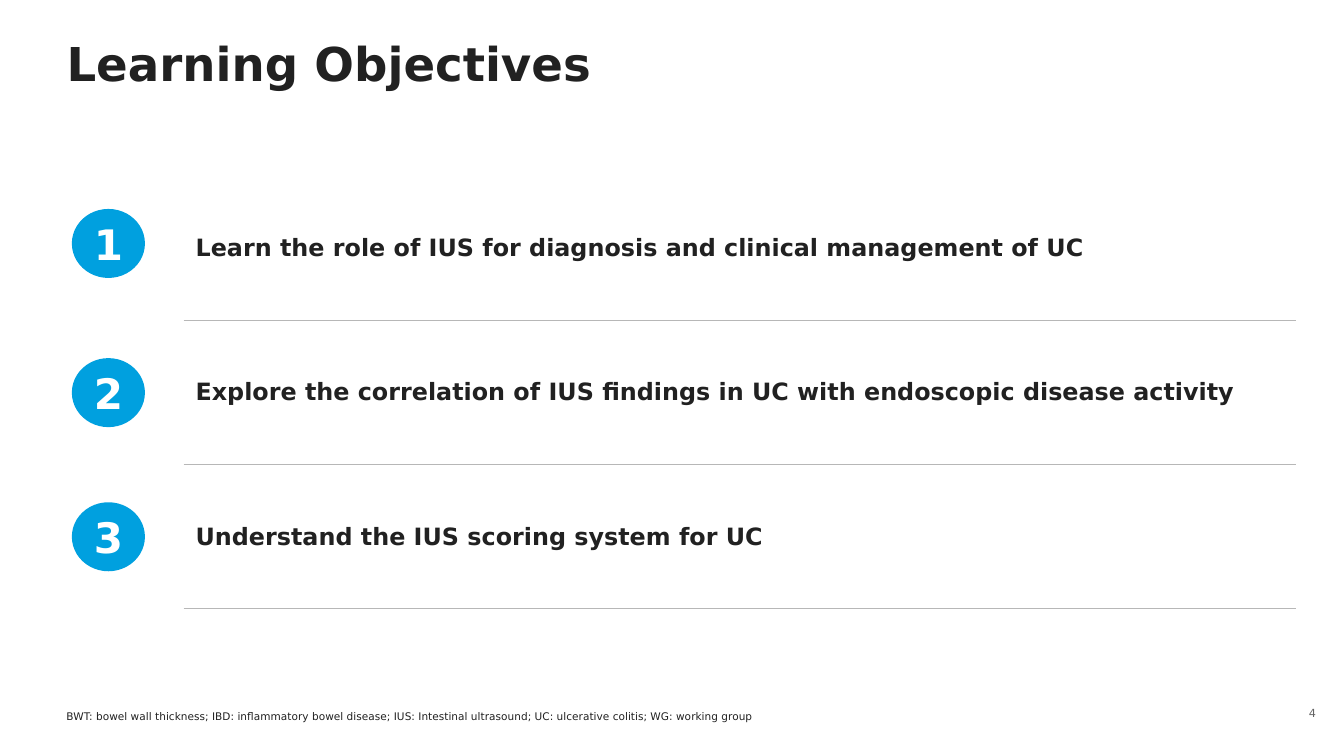
from lxml.etree import SubElement
from pptx import Presentation
from pptx.dml.color import RGBColor
from pptx.enum.shapes import MSO_SHAPE
from pptx.enum.text import MSO_ANCHOR, PP_ALIGN
from pptx.oxml.ns import qn
from pptx.util import Inches, Pt

INK = RGBColor(0x21, 0x21, 0x21)
BLUE = RGBColor(0x00, 0xA0, 0xDF)
GRAY = RGBColor(0x64, 0x64, 0x64)
RULE = RGBColor(0xB7, 0xB7, 0xB7)
WHITE = RGBColor(0xFF, 0xFF, 0xFF)
FONT = "DejaVu Sans"

OBJECTIVES = [
    (2.09, "Learn the role of IUS for diagnosis and clinical management of UC"),
    (3.57, "Explore the correlation of IUS findings in UC with endoscopic disease activity"),
    (5.0, "Understand the IUS scoring system for UC"),
]
ABBREVIATIONS = (
    "BWT: bowel wall thickness; IBD: inflammatory bowel disease; "
    "IUS: Intestinal ultrasound; UC: ulcerative colitis; WG: working group"
)


def write_text(frame, text, size, color=INK, bold=False, align=PP_ALIGN.LEFT,
               anchor=MSO_ANCHOR.MIDDLE, margins=(0, 0, 0, 0), line_spacing=None):
    frame.word_wrap = True
    frame.vertical_anchor = anchor
    (frame.margin_left, frame.margin_top,
     frame.margin_right, frame.margin_bottom) = map(Inches, margins)
    paragraph = frame.paragraphs[0]
    paragraph.alignment = align
    paragraph.line_spacing = line_spacing
    run = paragraph.add_run()
    run.text = text
    run.font.name = FONT
    run.font.size = Pt(size)
    run.font.bold = bold
    run.font.color.rgb = color


class SlideBuilder:
    def __init__(self, presentation):
        self.slide = presentation.slides.add_slide(presentation.slide_layouts[5])

    def title(self, text, left, top, width, height):
        title = self.slide.shapes.title
        title.left, title.top = Inches(left), Inches(top)
        title.width, title.height = Inches(width), Inches(height)
        write_text(title.text_frame, text, 33.3, bold=True,
                   anchor=MSO_ANCHOR.TOP, line_spacing=0.9)

    def text(self, text, left, top, width, height, **style):
        box = self.slide.shapes.add_textbox(
            Inches(left), Inches(top), Inches(width), Inches(height))
        write_text(box.text_frame, text, **style)

    def badge(self, number, left, top, width, height):
        badge = self.slide.shapes.add_shape(
            MSO_SHAPE.OVAL, Inches(left), Inches(top), Inches(width), Inches(height))
        badge.shadow.inherit = False
        badge.fill.solid()
        badge.fill.fore_color.rgb = BLUE
        badge.line.color.rgb = BLUE
        badge.line.width = Pt(2.5)
        write_text(badge.text_frame, str(number), 30, WHITE, True, PP_ALIGN.CENTER)

    def border(self, cell, side, visible):
        properties = cell._tc.get_or_add_tcPr()
        line = SubElement(properties, qn(f"a:ln{side}"), w=str(Pt(1)))
        if visible:
            fill = SubElement(line, qn("a:solidFill"))
            SubElement(fill, qn("a:srgbClr"), val=str(RULE))
        else:
            SubElement(line, qn("a:noFill"))

    def ruled_table(self, rows, left, top, width, row_height):
        table = self.slide.shapes.add_table(
            len(rows), 1, Inches(left), Inches(top),
            Inches(width), Inches(row_height * len(rows))).table
        table.first_row = False
        table.horz_banding = False
        for index, text in enumerate(rows):
            table.rows[index].height = Inches(row_height)
            cell = table.cell(index, 0)
            write_text(cell.text_frame, text, 17, bold=True)
            cell.vertical_anchor = MSO_ANCHOR.MIDDLE
            cell.margin_left, cell.margin_right = Inches(0.12), Inches(0.06)
            cell.margin_top = cell.margin_bottom = Inches(0.04)
            for side in "LRTB":
                self.border(cell, side, side == "B" or (side == "T" and index > 0))
            cell.fill.background()


def main():
    presentation = Presentation()
    presentation.slide_width = Inches(13.33)
    presentation.slide_height = Inches(7.5)
    builder = SlideBuilder(presentation)
    builder.title("Learning Objectives", 0.66, 0.41, 11.1, 0.5)
    builder.ruled_table([text for _, text in OBJECTIVES], 1.82, 1.75, 11.03, 1.43)
    for number, (top, _) in enumerate(OBJECTIVES, 1):
        builder.badge(number, 0.73, top, 0.69, 0.65)
    builder.text("4", 12.73, 6.89, 0.42, 0.36, size=8, color=GRAY,
                 align=PP_ALIGN.RIGHT, margins=(0.1, 0.05, 0.1, 0.05))
    builder.text(ABBREVIATIONS, 0.66, 6.87, 9.17, 0.3, size=7.5,
                 anchor=MSO_ANCHOR.BOTTOM)
    presentation.save("out.pptx")


if __name__ == "__main__":
    main()
